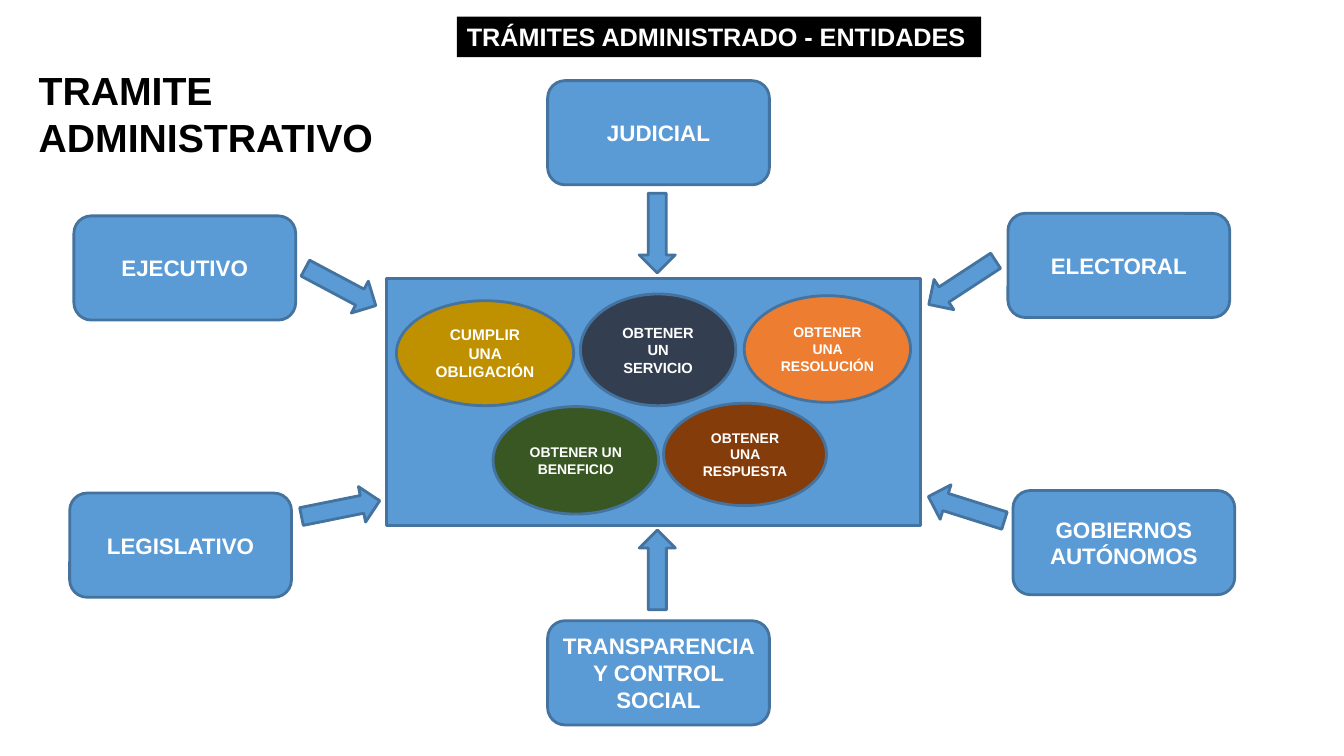
from pptx import Presentation
from pptx.dml.color import RGBColor
from pptx.enum.shapes import MSO_SHAPE as Shape
from pptx.enum.text import MSO_ANCHOR as Anchor, MSO_AUTO_SIZE as AutoSize, PP_ALIGN as Align
from pptx.util import Inches, Pt

WIDTH, HEIGHT = Inches(13.333), Inches(7.5)
COLUMNS, ROWS = 160, 90
BLUE, OUTLINE, WHITE, BLACK = "5B9BD5", "43739E", "FFFFFF", "000000"

ENTITY_SIZE = (26.4, 12.4)
ARROW_SIZE = (4.3, 9.5)
ENTITIES = [
    ("JUDICIAL", (65.2, 9.6), (76.1, 23), 0),
    ("EJECUTIVO", (8.8, 25.7), (38.4, 29.4), 298),
    ("ELECTORAL", (120, 25.4), (112.4, 28.9), 56.8),
    ("LEGISLATIVO", (8.3, 58.7), (38.4, 55.8), 258.6),
    ("GOBIERNOS AUTÓNOMOS", (120.6, 58.4), (112.9, 55.8), 107.5),
    ("TRANSPARENCIA Y CONTROL SOCIAL", (65.2, 73.9), (76.1, 63.1), 180),
]
PURPOSES = [
    ("CUMPLIR UNA OBLIGACIÓN", (47.2, 35.8, 21.1, 12.5), "BF9000", 11),
    ("OBTENER UN BENEFICIO", (58.7, 48.4, 19.7, 12.8), "385723", 10),
    ("OBTENER UN SERVICIO", (69.1, 35, 18.5, 13.3), "333F50", 10.5),
    ("OBTENER UNA RESOLUCIÓN", (88.6, 35.2, 19.8, 12.7), "ED7D31", 10),
    ("OBTENER UNA RESPUESTA", (79, 48, 19.4, 12.2), "843C0B", 10),
]


def place(column, row, columns, rows):
    across, down = WIDTH / COLUMNS, HEIGHT / ROWS
    return [round(v) for v in (column * across, row * down, columns * across, rows * down)]


def paint(color_format, color):
    color_format.rgb = RGBColor.from_string(color)


def add_figure(slide, kind, cells, fill, outline=OUTLINE):
    figure = slide.shapes.add_shape(kind, *place(*cells))
    figure.shadow.inherit = False
    figure.fill.solid()
    paint(figure.fill.fore_color, fill)
    if outline:
        paint(figure.line.color, outline)
        figure.line.width = Pt(2)
    else:
        figure.line.fill.background()
    return figure


def write(figure, wording, size, color=WHITE, align=Align.CENTER, anchor=Anchor.MIDDLE):
    frame = figure.text_frame
    frame.word_wrap = True
    frame.vertical_anchor = anchor
    paragraph = frame.paragraphs[0]
    paragraph.alignment = align
    run = paragraph.add_run()
    run.text = wording
    run.font.name = "Arial"
    run.font.size = Pt(size)
    run.font.bold = True
    paint(run.font.color, color)
    return frame


def add_title(slide):
    title = slide.shapes.title
    title.left, title.top, title.width, title.height = place(3.4, 7.3, 52.6, 12.5)
    frame = write(title, "TRAMITE ADMINISTRATIVO", 28, BLACK, Align.LEFT, Anchor.TOP)
    frame.auto_size = AutoSize.NONE


def add_banner(slide):
    banner = add_figure(slide, Shape.RECTANGLE, (54.4, 2, 62.4, 4.8), BLACK, None)
    frame = write(banner, "TRÁMITES ADMINISTRADO - ENTIDADES", 18,
                  align=Align.LEFT, anchor=Anchor.TOP)
    frame.word_wrap = False
    frame.auto_size = AutoSize.SHAPE_TO_FIT_TEXT


def add_purpose(slide, wording, cells, fill, size):
    write(add_figure(slide, Shape.OVAL, cells, fill), wording, size)


def add_entity(slide, wording, corner, arrow_corner, angle):
    entity = add_figure(slide, Shape.ROUNDED_RECTANGLE, corner + ENTITY_SIZE, BLUE)
    frame = write(entity, wording, 16)
    frame.margin_left = frame.margin_right = round(WIDTH / COLUMNS)
    arrow = add_figure(slide, Shape.DOWN_ARROW, arrow_corner + ARROW_SIZE, BLUE)
    arrow.rotation = angle


def main():
    deck = Presentation()
    deck.slide_width, deck.slide_height = WIDTH, HEIGHT
    slide = deck.slides.add_slide(deck.slide_layouts.get_by_name("Title Only"))
    add_title(slide)
    add_figure(slide, Shape.RECTANGLE, (46, 33.2, 63.6, 29.4), BLUE)
    for purpose in PURPOSES:
        add_purpose(slide, *purpose)
    add_banner(slide)
    for entity in ENTITIES:
        add_entity(slide, *entity)
    deck.save("out.pptx")


if __name__ == "__main__":
    main()
